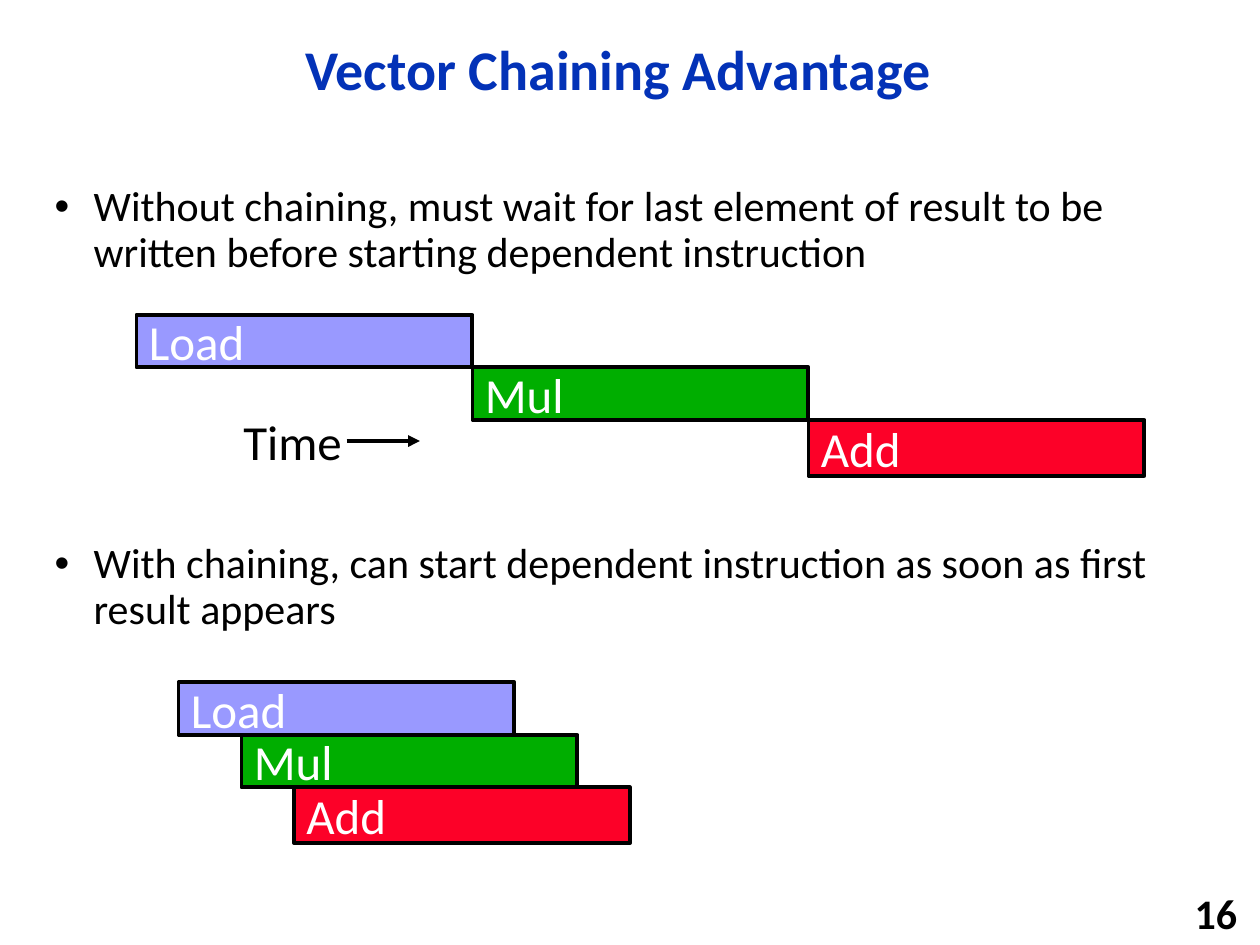
import pptx
import pptx.dml.color
import pptx.enum.shapes
import pptx.enum.text
import pptx.oxml.ns
import pptx.util
import lxml.etree

ALIGN = pptx.enum.text.PP_ALIGN
UNIT = pptx.util.Inches(1) // 12  # grid of 120 columns by 90 rows
BAR_COLUMNS = 32
BAR_ROWS = 5
INSTRUCTIONS = [("Load", "9999FF", 5), ("Mul", "00AE00", 5), ("Add", "FC0128", 5.3)]


def colour(hex_value):
    return pptx.dml.color.RGBColor.from_string(hex_value)


def grid(*cells):
    return [round(cell * UNIT) for cell in cells]


def add_child(parent, tag, **attributes):
    child = lxml.etree.SubElement(parent, pptx.oxml.ns.qn(tag))
    for name, value in attributes.items():
        child.set(name, value)
    return child


def write(shape, text, size, hex_value, bold=False, align=ALIGN.LEFT, wrap=True):
    frame = shape.text_frame
    frame.word_wrap = wrap
    frame.auto_size = pptx.enum.text.MSO_AUTO_SIZE.NONE
    frame.vertical_anchor = pptx.enum.text.MSO_ANCHOR.MIDDLE
    paragraph = frame.paragraphs[0]
    paragraph.alignment = align
    run = paragraph.add_run()
    run.text = text
    run.font.name = "Calibri"
    run.font.size = pptx.util.Pt(size)
    run.font.bold = bold
    run.font.color.rgb = colour(hex_value)
    return paragraph


def place(shape, box):
    shape.left, shape.top, shape.width, shape.height = grid(*box)


def set_title(title, box, text):
    place(title, box)
    write(title, text, 32, "0332B7", bold=True, align=ALIGN.CENTER).line_spacing = 0.9


def set_bullet(body, box, text):
    place(body, box)
    paragraph = write(body, text, 24, "000000")
    paragraph.line_spacing = 0.9
    paragraph.space_before = pptx.util.Pt(7.2)
    properties = paragraph._p.get_or_add_pPr()
    indent = pptx.util.Inches(0.31)
    properties.set("marL", str(indent))
    properties.set("indent", str(-indent))
    add_child(properties, "a:buFont", typeface="Arial")
    add_child(properties, "a:buChar", char="•")


def add_timeline(slide, left, top, starts):
    """Stack one bar per instruction, each begun at its own column."""
    for row, (start, (name, fill, rows)) in enumerate(zip(starts, INSTRUCTIONS)):
        bar = slide.shapes.add_shape(
            pptx.enum.shapes.MSO_SHAPE.RECTANGLE,
            *grid(left + start, top + row * BAR_ROWS, BAR_COLUMNS, rows))
        bar.shadow.inherit = False
        bar.fill.solid()
        bar.fill.fore_color.rgb = colour(fill)
        bar.line.color.rgb = colour("000000")
        bar.line.width = pptx.util.Pt(2.25)
        write(bar, name, 28, "FFFFFF")


def add_time_axis(slide, left, top, width, height):
    label = slide.shapes.add_textbox(*grid(left, top, width, height))
    write(label, "Time", 28, "000000", wrap=False)
    arrow_row = top + height / 2
    arrow = slide.shapes.add_connector(
        pptx.enum.shapes.MSO_CONNECTOR.STRAIGHT,
        *grid(left + width - 1, arrow_row, left + width + 6, arrow_row))
    arrow.line.color.rgb = colour("000000")
    arrow.line.width = pptx.util.Pt(2.25)
    add_child(arrow.line._get_or_add_ln(), "a:tailEnd", type="triangle")
    add_child(arrow._element.spPr, "a:effectLst")


def add_page_number(slide, box, number):
    write(slide.shapes.add_textbox(*grid(*box)), number, 24, "000000",
          bold=True, align=ALIGN.RIGHT)


def main():
    deck = pptx.Presentation()
    deck.slide_width, deck.slide_height = grid(120, 90)
    slide = deck.slides.add_slide(deck.slide_layouts.get_by_name("Two Content"))
    title, without_chaining, with_chaining = slide.placeholders

    set_title(title, (11, 2, 95.8, 9.8), "Vector Chaining Advantage")

    # Without chaining: each instruction waits for the whole previous one
    set_bullet(without_chaining, (4, 17, 112, 10),
               "Without chaining, must wait for last element of result "
               "to be written before starting dependent instruction")
    add_timeline(slide, 13, 30, (0, BAR_COLUMNS, 2 * BAR_COLUMNS))
    add_time_axis(slide, 22, 38.5, 12, 7)

    # With chaining: the instructions overlap
    set_bullet(with_chaining, (4, 51, 112, 10),
               "With chaining, can start dependent instruction "
               "as soon as first result appears")
    add_timeline(slide, 17, 65, (0, 6, 11))

    add_page_number(slide, (94, 85, 25, 3.8), "16")
    deck.save("out.pptx")


if __name__ == "__main__":
    main()
